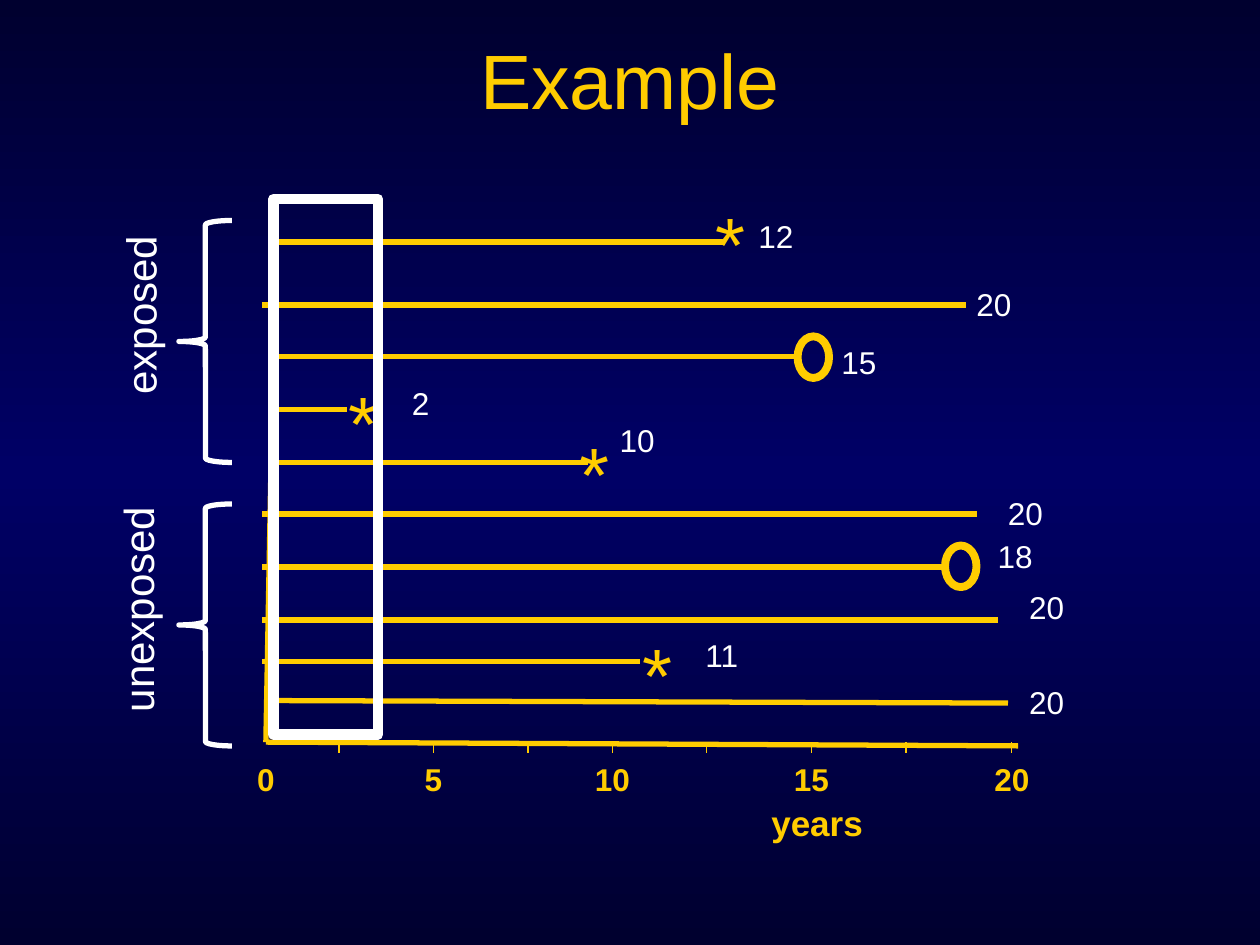
import copy
import lxml.etree
import pptx
import pptx.util
import pptx.dml.color
import pptx.enum.shapes
import pptx.enum.text
import pptx.oxml.ns

Inches = pptx.util.Inches
Pt = pptx.util.Pt
SHAPE = pptx.enum.shapes.MSO_SHAPE
ALIGN = pptx.enum.text.PP_ALIGN
ANCHOR = pptx.enum.text.MSO_ANCHOR

COLORS = {"gold": "FFCC00", "white": "FFFFFF", "night": "00002F", "navy": "000066"}
BACKGROUND = [(0, "night"), (0.5, "navy"), (1, "night")]

AXES = [((2.19, 1.56), (2.11, 5.89)), ((2.11, 5.89), (8.08, 5.92))]
TICK_TOP, TICK_BOTTOM = 5.89, 5.98
TICKS = [(2.69, ""), (3.44, "5"), (4.19, ""), (4.86, "10"), (5.61, ""),
         (6.44, "15"), (7.19, ""), (8.03, "20")]
ORIGIN = (2.11, "0")

# start, end, outcome, outcome position, years, years position
LIFELINES = [
    ((2.17, 1.92), (5.75, 1.92), "event", (5.58, 1.5), "12", (5.92, 1.67)),
    ((2.08, 2.42), (7.67, 2.42), None, None, "20", (7.65, 2.21)),
    ((2.17, 2.83), (6.33, 2.83), "lost", (6.33, 2.67), "15", (6.58, 2.67)),
    ((2.17, 3.25), (2.75, 3.25), "event", (2.67, 2.92), "2", (3.17, 3)),
    ((2.17, 3.67), (4.67, 3.67), "event", (4.5, 3.33), "10", (4.82, 3.29)),
    ((2.08, 4.08), (7.75, 4.08), None, None, "20", (7.9, 3.87)),
    ((2.08, 4.5), (7.5, 4.5), "lost", (7.5, 4.33), "18", (7.82, 4.21)),
    ((2.08, 4.92), (7.92, 4.92), None, None, "20", (8.07, 4.62)),
    ((2.08, 5.25), (5.08, 5.25), "event", (5, 4.92), "11", (5.5, 5)),
    ((2.11, 5.56), (8, 5.58), None, None, "20", (8.07, 5.37)),
]
GROUPS = [("exposed", (0.38, 2.25, 1.46, 0.5), 1.75),
          ("unexposed", (0.17, 4.58, 1.84, 0.5), 4)]
WINDOW = (2.17, 1.58, 0.83, 4.25)

TITLE = {"size": Pt(44)}
AXIS_LABEL = {"size": Pt(18), "bold": True}
AXIS_NAME = {"size": Pt(20), "bold": True}
EVENT = {"size": Pt(44)}
YEARS = {"size": Pt(18)}
GROUP = {"size": Pt(24)}


def rgb(color):
    return pptx.dml.color.RGBColor.from_string(COLORS[color])


def paint_background(slide):
    fill = slide.background.fill
    fill.gradient()
    fill.gradient_angle = 90
    first = next(slide.element.iter(pptx.oxml.ns.qn("a:gs")))
    first.addnext(copy.deepcopy(first))
    for stop, (position, color) in zip(fill.gradient_stops, BACKGROUND):
        stop.position = position
        stop.color.rgb = rgb(color)


def add_line(slide, start, end, width):
    line = slide.shapes.add_connector(
        pptx.enum.shapes.MSO_CONNECTOR.STRAIGHT, *map(Inches, start + end))
    line.line.color.rgb = rgb("gold")
    line.line.width = Pt(width)
    lxml.etree.SubElement(line._element.spPr, pptx.oxml.ns.qn("a:effectLst"))


def add_outline(slide, preset, box, color, width):
    outline = slide.shapes.add_shape(preset, *map(Inches, box))
    outline.shadow.inherit = False
    outline.fill.background()
    outline.line.color.rgb = rgb(color)
    outline.line.width = Pt(width)
    return outline


def add_text(slide, text, box, color, font, align=ALIGN.LEFT,
             anchor=ANCHOR.TOP, wrap=False, rotation=0):
    label = slide.shapes.add_textbox(*map(Inches, box))
    label.rotation = rotation
    frame = label.text_frame
    frame.word_wrap = wrap
    frame.vertical_anchor = anchor
    paragraph = frame.paragraphs[0]
    paragraph.alignment = align
    run = paragraph.add_run()
    run.text = text
    run.font.color.rgb = rgb(color)
    for name, value in {"name": "Arial", **font}.items():
        setattr(run.font, name, value)


def number_width(text):
    return 0.2 + 0.14 * len(text)


def add_axes(slide):
    for start, end in AXES:
        add_line(slide, start, end, 3)
    for x, _ in TICKS:
        add_line(slide, (x, TICK_TOP), (x, TICK_BOTTOM), 0.75)
    for x, text in [ORIGIN] + TICKS:
        if text:
            width = number_width(text)
            add_text(slide, text, (x - width / 2, TICK_BOTTOM, width, 0.4),
                     "gold", AXIS_LABEL, ALIGN.CENTER)
    add_text(slide, "years", (4.86, 6.31, 3.25, 0.43), "gold", AXIS_NAME,
             ALIGN.CENTER, wrap=True)


def add_lifelines(slide):
    for start, end, outcome, place, years, years_place in LIFELINES:
        add_line(slide, start, end, 3)
        if outcome == "event":
            add_text(slide, "*", place + (0.44, 0.83), "gold", EVENT)
        elif outcome == "lost":
            add_outline(slide, SHAPE.OVAL, place + (0.25, 0.33), "gold", 4.5)
        add_text(slide, years, years_place + (number_width(years), 0.4), "white", YEARS)


def add_groups(slide):
    for name, box, top in GROUPS:
        brace = add_outline(slide, SHAPE.LEFT_BRACE, (1.42, top, 0.42, 1.92), "white", 3)
        brace.adjustments[0] = 0.083
        add_text(slide, name, box, "white", GROUP, rotation=270)


def main():
    deck = pptx.Presentation()
    deck.slide_width, deck.slide_height = Inches(10), Inches(7.5)
    slide = deck.slides.add_slide(deck.slide_layouts[6])
    paint_background(slide)
    add_text(slide, "Example", (0.5, 0, 9, 1.25), "gold", TITLE,
             ALIGN.CENTER, ANCHOR.MIDDLE, wrap=True)
    add_axes(slide)
    add_lifelines(slide)
    add_outline(slide, SHAPE.RECTANGLE, WINDOW, "white", 6)
    add_groups(slide)
    deck.save("out.pptx")


if __name__ == "__main__":
    main()
